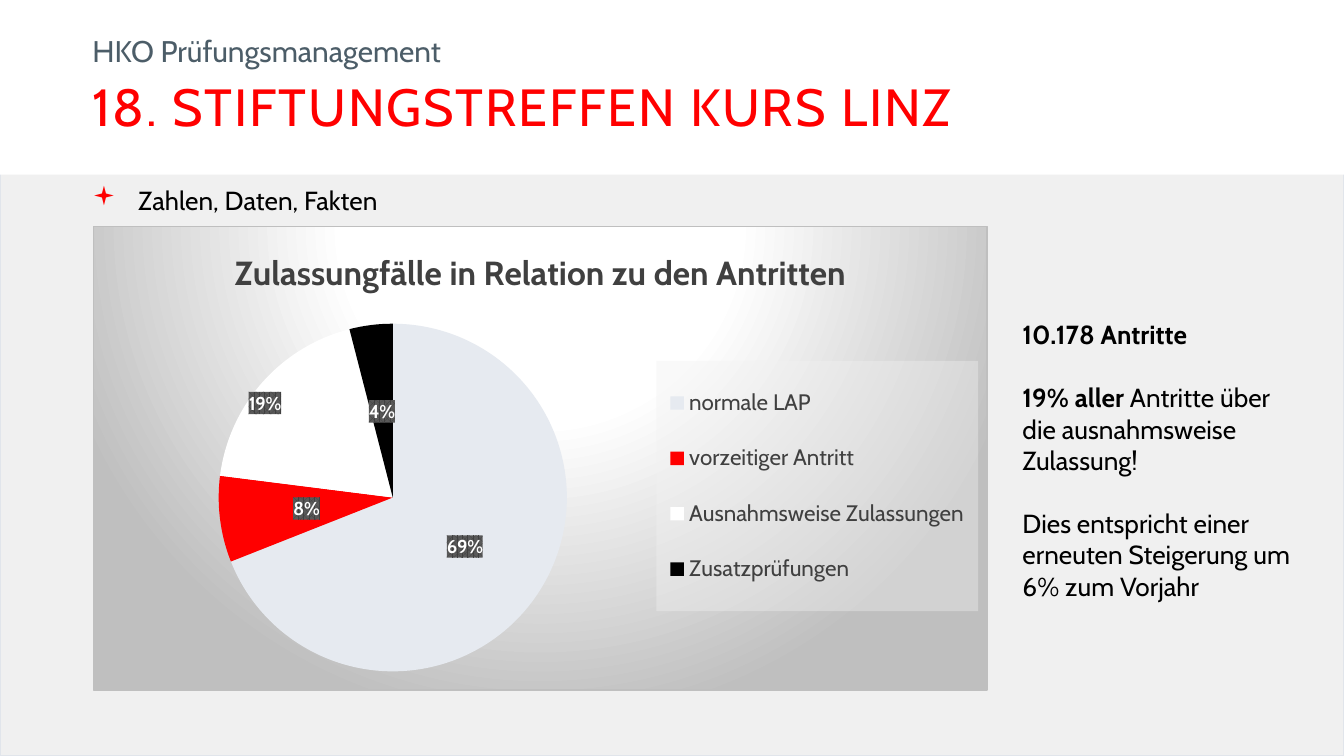
"""Builds the slide on examination figures with a pie chart and key statements."""
import copy

import pptx
import pptx.chart.data
import pptx.dml.color
import pptx.enum.chart
import pptx.enum.shapes
import pptx.enum.text
import pptx.oxml
import pptx.oxml.ns
import pptx.util

Inches = pptx.util.Inches
Pt = pptx.util.Pt
RGBColor = pptx.dml.color.RGBColor
qn = pptx.oxml.ns.qn

SLIDE_WIDTH = 10
SLIDE_HEIGHT = SLIDE_WIDTH * 9 / 16
FONT = "Cabin"
BLACK = RGBColor(0x00, 0x00, 0x00)
WHITE = RGBColor(0xFF, 0xFF, 0xFF)
RED = RGBColor(0xFF, 0x00, 0x00)
SLATE = RGBColor(0x4C, 0x5D, 0x68)
CHARCOAL = RGBColor(0x40, 0x40, 0x40)
PALE_GREY = RGBColor(0xF0, 0xF0, 0xF0)
PALE_BLUE = RGBColor(0xE6, 0xEA, 0xF0)
EDGE = RGBColor(0xE1, 0xE5, 0xEB)
NAMESPACES = pptx.oxml.ns.nsdecls("a", "c")

CASES = {
    "normale LAP": (0.69, PALE_BLUE),
    "vorzeitiger Antritt": (0.08, RED),
    "Ausnahmsweise Zulassungen": (0.19, WHITE),
    "Zusatzprüfungen": (0.04, BLACK),
}
CHART_FORMAT = """<a:gradFill><a:gsLst>
<a:gs pos="0"><a:srgbClr val="FFFFFF"/></a:gs>
<a:gs pos="39000"><a:srgbClr val="FFFFFF"/></a:gs>
<a:gs pos="100000"><a:srgbClr val="BFBFBF"/></a:gs></a:gsLst>
<a:path path="circle"><a:fillToRect l="50000" t="-80000" r="50000" b="180000"/></a:path></a:gradFill>
<a:ln w="9525"><a:solidFill><a:srgbClr val="BFBFBF"/></a:solidFill></a:ln>"""
LEGEND_FORMAT = '<a:solidFill><a:srgbClr val="F2F2F2"><a:alpha val="39000"/></a:srgbClr></a:solidFill>'
LABEL_FORMAT = """<a:pattFill prst="pct75"><a:fgClr><a:srgbClr val="404040"/></a:fgClr>
<a:bgClr><a:srgbClr val="595959"/></a:bgClr></a:pattFill>"""


def format_font(font, size, color, bold=False):
    """Apply the slide's typeface with the given size, colour and weight."""
    values = {"name": FONT, "size": Pt(size), "bold": bold}
    for name, value in values.items():
        setattr(font, name, value)
    font.color.rgb = color


def add_band(slide, height, fill, line=None):
    """Add a rectangle as wide as the slide at its top."""
    shape = slide.shapes.add_shape(
        pptx.enum.shapes.MSO_SHAPE.RECTANGLE, 0, 0, Inches(SLIDE_WIDTH), Inches(height))
    shape.shadow.inherit = False
    shape.fill.solid()
    shape.fill.fore_color.rgb = fill
    if line is None:
        shape.line.fill.background()
    else:
        shape.line.color.rgb = line
        shape.line.width = Pt(0.75)


def add_text(slide, box, paragraphs, size, color, anchor="TOP", gap=0):
    """Add a text box whose paragraphs are lists of (text, bold) runs."""
    shape = slide.shapes.add_textbox(*map(Inches, box))
    frame = shape.text_frame
    frame.word_wrap = True
    frame.vertical_anchor = getattr(pptx.enum.text.MSO_ANCHOR, anchor)
    for index, runs in enumerate(paragraphs):
        paragraph = frame.add_paragraph() if index else frame.paragraphs[0]
        if index:
            paragraph.space_before = Pt(gap)
        for text, bold in runs:
            run = paragraph.add_run()
            run.text = text
            format_font(run.font, size, color, bold)
    return frame.paragraphs[0]


def add_bullet(paragraph):
    """Give a paragraph a red square bullet and a hanging indent."""
    properties = paragraph._p.get_or_add_pPr()
    indent = Inches(0.34)
    properties.set("marL", str(indent))
    properties.set("indent", str(-indent))
    for content in (f'<a:buClr {NAMESPACES}><a:srgbClr val="{RED}"/></a:buClr>',
                    f'<a:buFont {NAMESPACES} typeface="Wingdings"/>',
                    f'<a:buChar {NAMESPACES} char="▪"/>'):
        properties.append(pptx.oxml.parse_xml(content))


def make_layout(**values):
    """Return a manual chart layout element."""
    content = "".join(f'<c:{name} val="{value}"/>' for name, value in values.items())
    return pptx.oxml.parse_xml(
        f"<c:layout {NAMESPACES}><c:manualLayout>{content}</c:manualLayout></c:layout>")


def set_layout(element, index, layout):
    """Replace the layout of a chart part."""
    for old in element.findall(qn("c:layout")):
        element.remove(old)
    element.insert(index, layout)


def set_format(element, content):
    """Put shape properties in front of a chart part's text properties."""
    element.find(qn("c:txPr")).addprevious(
        pptx.oxml.parse_xml(f"<c:spPr {NAMESPACES}>{content}</c:spPr>"))


def format_labels(series):
    """Show percentages on dark boxes and move the label of the white slice."""
    labels = series.data_labels
    values = {"number_format": "0%", "number_format_is_linked": False, "show_value": True,
              "position": pptx.enum.chart.XL_LABEL_POSITION.CENTER}
    for name, value in values.items():
        setattr(labels, name, value)
    format_font(labels.font, 10, WHITE, True)
    element = labels._element
    set_format(element, LABEL_FORMAT)
    moved = pptx.oxml.parse_xml(f'<c:dLbl {NAMESPACES}><c:idx val="2"/></c:dLbl>')
    moved.append(make_layout(x=-0.07, y=-0.08))
    for child in element:
        if child.tag != qn("c:showLeaderLines"):
            moved.append(copy.deepcopy(child))
    element.insert(0, moved)


def add_pie(slide):
    """Add the pie chart of admission cases."""
    data = pptx.chart.data.CategoryChartData(number_format="0%")
    data.categories = list(CASES)
    data.add_series("Series 1", [value for value, color in CASES.values()])
    chart = slide.shapes.add_chart(
        pptx.enum.chart.XL_CHART_TYPE.PIE, *map(Inches, (0.69, 1.68, 6.66, 3.46)), data).chart
    format_font(chart.font, 10, BLACK)
    set_format(chart._chartSpace, CHART_FORMAT)

    chart.has_title = True
    title = chart.chart_title.text_frame
    title.text = "Zulassungfälle in Relation zu den Antritten"
    format_font(title.paragraphs[0].runs[0].font, 18, CHARCOAL, True)

    chart.has_legend = True
    legend = chart.legend
    legend.position = pptx.enum.chart.XL_LEGEND_POSITION.RIGHT
    legend.include_in_layout = False
    format_font(legend.font, 12, CHARCOAL)
    set_format(legend._element, LEGEND_FORMAT)
    set_layout(legend._element, 1, make_layout(
        xMode="edge", yMode="edge", x=0.63, y=0.29, w=0.36, h=0.54))

    plot = chart.plots[0]
    plot.vary_by_categories = True
    set_layout(plot._element.getparent(), 0, make_layout(
        layoutTarget="inner", xMode="edge", yMode="edge", x=0.14, y=0.21, w=0.39, h=0.75))
    series = plot.series[0]
    for index, (value, color) in enumerate(CASES.values()):
        fill = series.points[index].format.fill
        fill.solid()
        fill.fore_color.rgb = color
    format_labels(series)


def main():
    """Build and save the presentation."""
    presentation = pptx.Presentation()
    presentation.slide_width = Inches(SLIDE_WIDTH)
    presentation.slide_height = Inches(SLIDE_HEIGHT)
    slide = presentation.slides.add_slide(presentation.slide_layouts[6])
    add_band(slide, SLIDE_HEIGHT, PALE_GREY, EDGE)
    add_band(slide, 1.3, WHITE)
    overline = add_text(slide, (0.59, 0.19, 8.64, 0.37),
                        [[("HKO Prüfungsmanagement", False)]], 16, SLATE, "MIDDLE")
    overline.line_spacing = Pt(19)
    heading = add_text(slide, (0.59, 0.56, 9.33, 0.46),
                       [[("18. STIFTUNGSTREFFEN KURS LINZ", False)]], 28, RED, "MIDDLE")
    heading.runs[0].font._element.set("spc", "100")
    topic = add_text(slide, (0.59, 1.32, 9.33, 3.83),
                     [[("Zahlen, Daten, Fakten", False)]], 14, BLACK)
    add_bullet(topic)
    add_text(slide, (7.51, 2.32, 2.26, 2.22), [
        [("10.178 Antritte", True)],
        [("19% aller ", True), ("Antritte über die ausnahmsweise Zulassung!", False)],
        [("Dies entspricht einer erneuten Steigerung um 6% zum Vorjahr", False)],
    ], 14, BLACK, gap=17)
    add_pie(slide)
    presentation.save("out.pptx")


if __name__ == "__main__":
    main()
